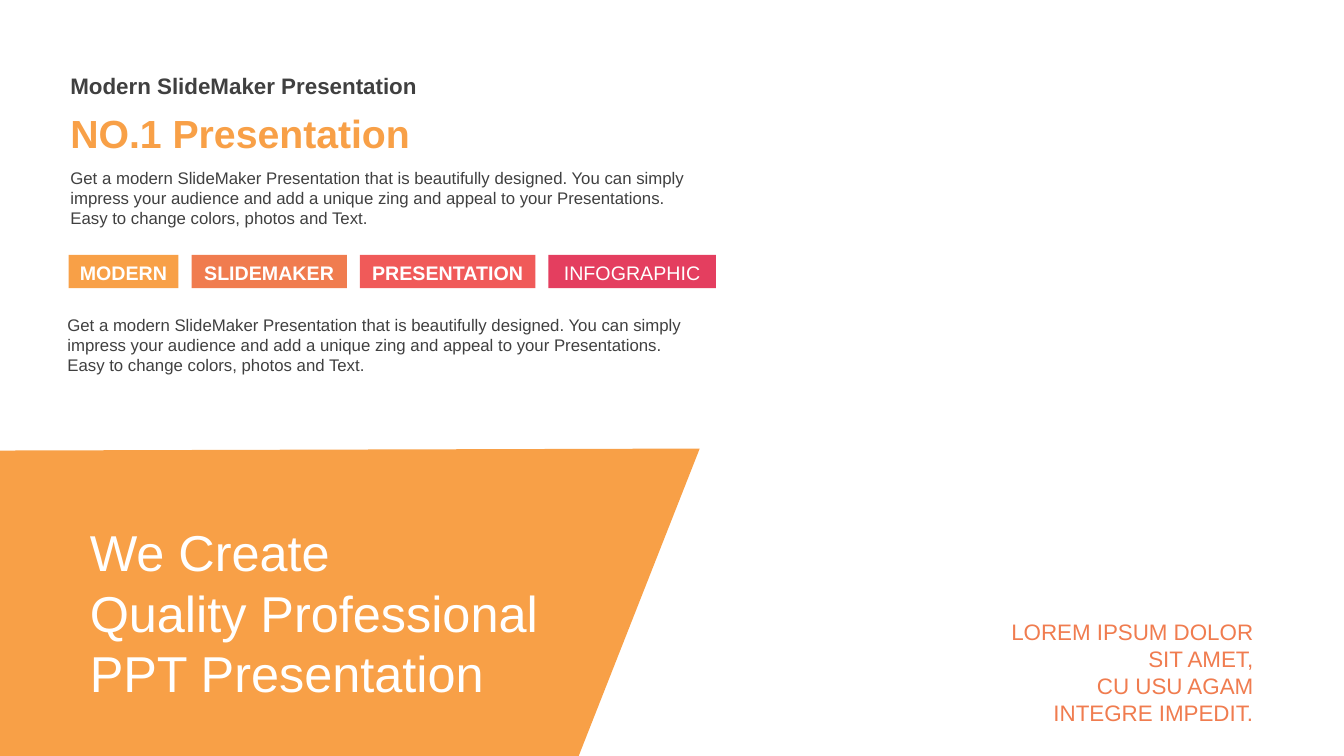
from pptx import Presentation
from pptx.dml.color import RGBColor
from pptx.enum.shapes import MSO_SHAPE
from pptx.enum.text import MSO_ANCHOR, MSO_AUTO_SIZE, PP_ALIGN
from pptx.util import Pt

EMU_PER_PX = 9144
FONT = "Arial"
COLORS = {
    "amber": "F8A047",
    "orange": "F07C4F",
    "coral": "F05A59",
    "crimson": "E43E5F",
    "dark": "404040",
    "white": "FFFFFF",
}
BODY = (
    "Get a modern SlideMaker Presentation that is beautifully designed. "
    "You can simply impress your audience and add a unique zing and appeal "
    "to your Presentations. Easy to change colors, photos and Text."
)
TAGS = [
    ("MODERN", 109, "amber", True),
    ("SLIDEMAKER", 154, "orange", True),
    ("PRESENTATION", 174, "coral", True),
    ("INFOGRAPHIC", 166, "crimson", False),
]
TAG_LEFT, TAG_TOP, TAG_HEIGHT, TAG_GAP = 68, 253, 33, 13


def px(length):
    return length * EMU_PER_PX


def color(name):
    return RGBColor.from_string(COLORS[name])


def paint(shape, fill):
    shape.shadow.inherit = False
    shape.fill.solid()
    shape.fill.fore_color.rgb = color(fill)
    shape.line.fill.background()


def write(frame, lines, size, font_color, bold=False,
          align=PP_ALIGN.LEFT, spacing=1.0):
    frame.word_wrap = True
    for index, line in enumerate(lines):
        paragraph = frame.add_paragraph() if index else frame.paragraphs[0]
        paragraph.alignment = align
        paragraph.line_spacing = spacing
        run = paragraph.add_run()
        run.text = line
        run.font.name = FONT
        run.font.size = Pt(size)
        run.font.bold = bold
        run.font.color.rgb = color(font_color)


def set_margins(frame, left, top, right, bottom):
    frame.margin_left, frame.margin_top = px(left), px(top)
    frame.margin_right, frame.margin_bottom = px(right), px(bottom)


def add_text(slide, box, lines, size, font_color, bold=False,
             align=PP_ALIGN.LEFT, anchor=MSO_ANCHOR.TOP):
    frame = slide.shapes.add_textbox(*map(px, box)).text_frame
    frame.auto_size = MSO_AUTO_SIZE.SHAPE_TO_FIT_TEXT
    frame.vertical_anchor = anchor
    write(frame, lines, size, font_color, bold, align)
    return frame


def add_panel(slide, points, fill):
    builder = slide.shapes.build_freeform(*points[0], scale=EMU_PER_PX)
    builder.add_line_segments(points[1:], close=True)
    paint(builder.convert_to_shape(), fill)


def add_tag(slide, left, width, label, fill, bold):
    shape = slide.shapes.add_shape(
        MSO_SHAPE.RECTANGLE, px(left), px(TAG_TOP), px(width), px(TAG_HEIGHT))
    paint(shape, fill)
    frame = shape.text_frame
    frame.vertical_anchor = MSO_ANCHOR.MIDDLE
    set_margins(frame, 10, 10, 10, 5)
    write(frame, [label], 14, "white", bold, PP_ALIGN.CENTER, 0.9)


def add_tags(slide):
    left = TAG_LEFT
    for label, width, fill, bold in TAGS:
        add_tag(slide, left, width, label, fill, bold)
        left += width + TAG_GAP


def main():
    presentation = Presentation()
    presentation.slide_width = px(1333)
    presentation.slide_height = px(750)
    slide = presentation.slides.add_slide(presentation.slide_layouts[6])

    add_panel(slide, [(0, 447), (694, 445), (574, 750), (0, 750)], "amber")
    slogan = add_text(
        slide, (85, 516, 522, 182),
        ["We Create", "Quality Professional", "PPT Presentation"],
        36, "white", anchor=MSO_ANCHOR.MIDDLE)
    set_margins(slogan, 4, 0, 4, 0)

    add_text(slide, (60, 104, 644, 57), ["NO.1 Presentation"],
             28, "amber", bold=True)
    add_text(slide, (60, 67, 644, 37), ["Modern SlideMaker Presentation"],
             16, "dark", bold=True)
    add_text(slide, (60, 161, 644, 71), [BODY], 12, "dark")
    add_tags(slide)
    add_text(slide, (57, 307, 644, 71), [BODY], 12, "dark")
    add_text(slide, (983, 608, 270, 118),
             ["LOREM IPSUM DOLOR SIT AMET,", "CU USU AGAM INTEGRE IMPEDIT."],
             16, "orange", align=PP_ALIGN.RIGHT, anchor=MSO_ANCHOR.MIDDLE)

    presentation.save("out.pptx")


if __name__ == "__main__":
    main()
